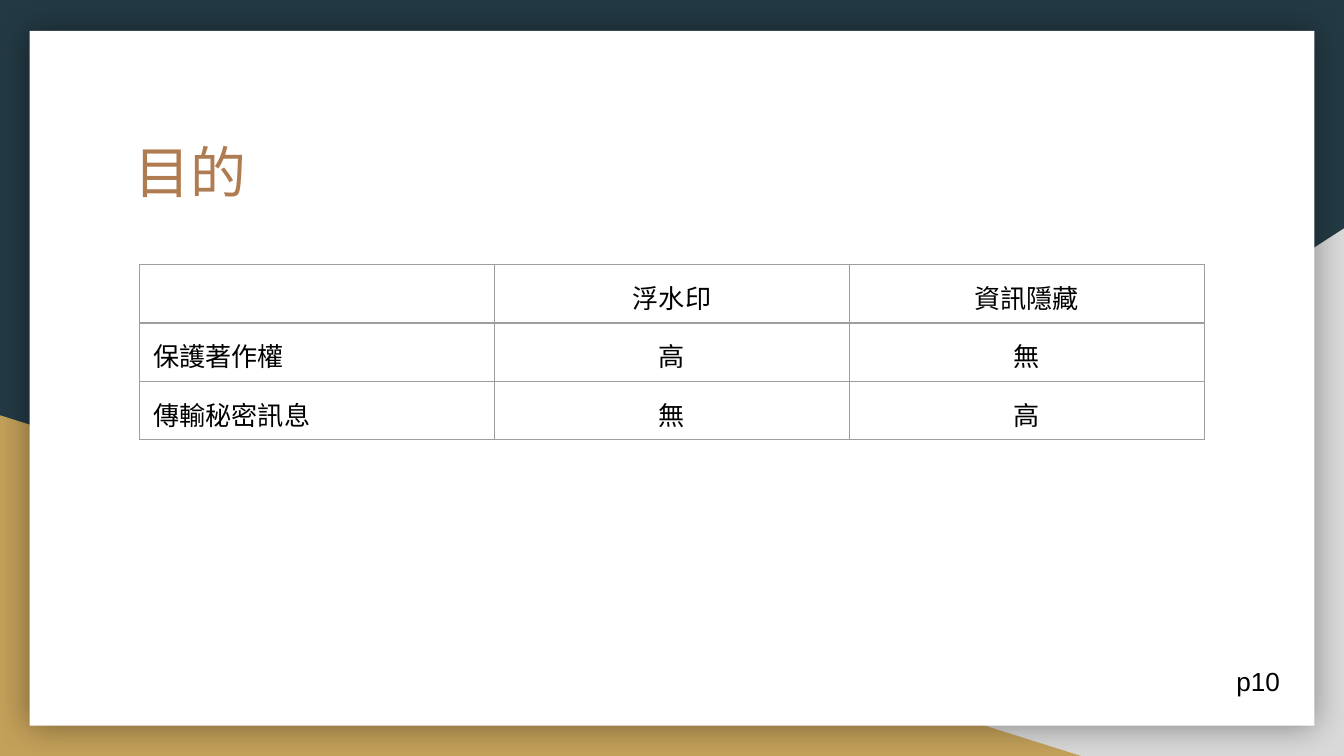
import pptx
import pptx.dml.color
import pptx.enum.shapes
import pptx.enum.text
import pptx.oxml
import pptx.oxml.ns
import pptx.util
from dataclasses import dataclass

Inches = pptx.util.Inches
Pt = pptx.util.Pt
Shape = pptx.enum.shapes.MSO_SHAPE
Align = pptx.enum.text.PP_ALIGN


@dataclass(frozen=True)
class Theme:
    navy: str = "233A44"
    gray: str = "D9D9D9"
    gold: str = "C4A15A"
    white: str = "FFFFFF"
    brown: str = "AF7B51"
    black: str = "000000"
    border: str = "9E9E9E"
    title_font: str = "TeX Gyre Adventor"
    body_font: str = "Arial"
    title_size: int = 30
    body_size: int = 14


THEME = Theme()

# Content
TITLE = "目的"
ROWS = [
    ("", "浮水印", "資訊隱藏"),
    ("保護著作權", "高", "無"),
    ("傳輸秘密訊息", "無", "高"),
]
PAGE_LABEL = "p10"

# Layout, in inches; the page is 16:9
PAGE_SIZE = (10, 10 * 9 / 16)
BACKDROP = [
    (Shape.RIGHT_TRIANGLE, (3.92, 1.7, 6.08, 3.93), THEME.gray, True),
    (Shape.RIGHT_TRIANGLE, (0, 3.09, 8.06, 2.54), THEME.gold, False),
    (Shape.RECTANGLE, (0.22, 0.23, 9.56, 5.17), THEME.white, False),
]
TITLE_AREA = (0.9, 0.92, 8.21, 1.04)
LABEL_AREA = (9.1, 4.9, 0.62, 0.34)
TABLE_ORIGIN = (1.04, 1.97)
COLUMN_WIDTH, ROW_HEIGHT = 2.64, 0.42
CELL_MARGIN = 0.1


def rgb(color):
    return pptx.dml.color.RGBColor.from_string(color)


def inches(lengths):
    return [Inches(length) for length in lengths]


def add_span(para, text, font=THEME.body_font, size=THEME.body_size, color=THEME.black):
    span = para.add_run()
    span.text = text
    span.font.name = font
    span.font.size = Pt(size)
    span.font.color.rgb = rgb(color)


def add_panel(page, kind, area, color, flipped):
    panel = page.shapes.add_shape(kind, *inches(area))
    panel.shadow.inherit = False
    panel.fill.solid()
    panel.fill.fore_color.rgb = rgb(color)
    panel.line.fill.background()
    if flipped:
        panel._element.spPr.xfrm.set("flipH", "1")
    return panel


def add_glow_shadow(panel, blur, opacity):
    effects = panel._element.spPr.find(pptx.oxml.ns.qn("a:effectLst"))
    effects.append(pptx.oxml.parse_xml(
        f'<a:outerShdw {pptx.oxml.ns.nsdecls("a")} blurRad="{Pt(blur)}" dist="0" dir="0" '
        f'algn="ctr" rotWithShape="0"><a:srgbClr val="{THEME.black}">'
        f'<a:alpha val="{opacity * 1000}"/></a:srgbClr></a:outerShdw>'))


def add_text(page, area, text, **style):
    box = page.shapes.add_textbox(*inches(area))
    frame = box.text_frame
    frame.word_wrap = True
    add_span(frame.paragraphs[0], text, **style)
    return frame


def set_borders(cell):
    properties = cell._tc.get_or_add_tcPr()
    for index, side in enumerate(("lnL", "lnR", "lnT", "lnB")):
        properties.insert(index, pptx.oxml.parse_xml(
            f'<a:{side} {pptx.oxml.ns.nsdecls("a")} w="{Pt(0.75)}"><a:solidFill>'
            f'<a:srgbClr val="{THEME.border}"/></a:solidFill></a:{side}>'))


def set_empty_size(para):
    para._p.append(pptx.oxml.parse_xml(
        f'<a:endParaRPr {pptx.oxml.ns.nsdecls("a")} sz="{THEME.body_size * 100}"/>'))


def add_grid(page):
    columns = len(ROWS[0])
    size = (COLUMN_WIDTH * columns, ROW_HEIGHT * len(ROWS))
    table = page.shapes.add_table(len(ROWS), columns, *inches(TABLE_ORIGIN + size)).table
    table.first_row = table.horz_banding = False
    for row, texts in enumerate(ROWS):
        for column, text in enumerate(texts):
            cell = table.cell(row, column)
            cell.fill.background()
            cell.margin_left = cell.margin_right = Inches(CELL_MARGIN)
            cell.margin_top = cell.margin_bottom = Inches(CELL_MARGIN)
            set_borders(cell)
            para = cell.text_frame.paragraphs[0]
            para.alignment = Align.CENTER if column else Align.LEFT
            if text:
                add_span(para, text)
            else:
                set_empty_size(para)


def main():
    deck = pptx.Presentation()
    deck.slide_width, deck.slide_height = inches(PAGE_SIZE)
    page = deck.slides.add_slide(deck.slide_layouts[6])

    # Background and white card
    page.background.fill.solid()
    page.background.fill.fore_color.rgb = rgb(THEME.navy)
    panels = [add_panel(page, *backdrop) for backdrop in BACKDROP]
    add_glow_shadow(panels[-1], blur=18, opacity=40)

    # Title
    title = add_text(page, TITLE_AREA, TITLE, font=THEME.title_font,
                     size=THEME.title_size, color=THEME.brown)
    title.margin_top = title.margin_bottom = Inches(CELL_MARGIN)

    # Comparison table and page label
    add_grid(page)
    add_text(page, LABEL_AREA, PAGE_LABEL)

    deck.save("out.pptx")


if __name__ == "__main__":
    main()
